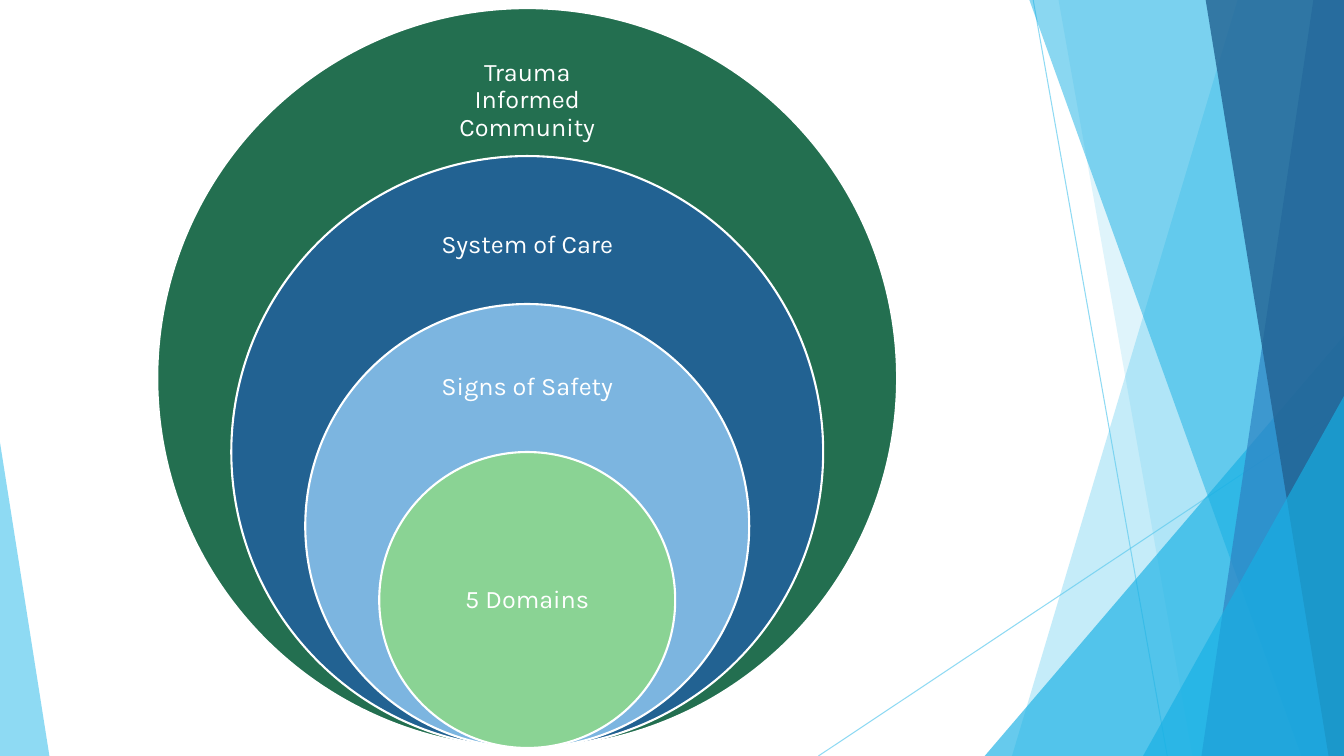
from pptx import Presentation
from pptx.dml.color import RGBColor
from pptx.enum.shapes import MSO_CONNECTOR, MSO_SHAPE
from pptx.enum.text import MSO_ANCHOR, PP_ALIGN
from pptx.oxml.ns import qn
from pptx.util import Pt
from lxml import etree

STRAIGHT = MSO_CONNECTOR.STRAIGHT
TRIANGLE = MSO_SHAPE.ISOSCELES_TRIANGLE
OVAL = MSO_SHAPE.OVAL
MIDDLE = MSO_ANCHOR.MIDDLE
CENTER = PP_ALIGN.CENTER

WHITE = RGBColor(0xFF, 0xFF, 0xFF)
SKY = RGBColor(0x5F, 0xCB, 0xEF)
CYAN = RGBColor(0x17, 0xB0, 0xE4)
BLUE = RGBColor(0x2E, 0x83, 0xC3)
NAVY = RGBColor(0x22, 0x62, 0x92)
FOREST = RGBColor(0x23, 0x6F, 0x50)
LIGHT_BLUE = RGBColor(0x7C, 0xB5, 0xE0)
LIGHT_GREEN = RGBColor(0x8A, 0xD3, 0x94)

WIDTH, HEIGHT = 960, 540
BAND_TOP = -0.6
CENTER_X, CIRCLES_BOTTOM = 376.6, 534.3
OUTER_DIAMETER = 528.5

# Circle colour, label, label top, label width, label height
CIRCLES = [
    (FOREST, "Trauma Informed Community", 32.4, 147.6, 79.2),
    (NAVY, "System of Care", 136.8, 147.6, 76.3),
    (LIGHT_BLUE, "Signs of Safety", 241.2, 147.6, 71.3),
    (LIGHT_GREEN, "5 Domains", 375.8, 149.8, 105.8),
]


def set_opacity(element, percent):
    for color in element.iter(qn("a:srgbClr")):
        etree.SubElement(color, qn("a:alpha"), val=str(percent * 1000))


def fill_facet(facet, color, opacity):
    facet.shadow.inherit = False
    facet.fill.solid()
    facet.fill.fore_color.rgb = color
    facet.line.fill.background()
    set_opacity(facet._element.spPr, opacity)


def add_ray(slide, x1, y1, x2, y2):
    ray = slide.shapes.add_connector(STRAIGHT, Pt(x1), Pt(y1), Pt(x2), Pt(y2))
    ray.line.color.rgb = SKY
    ray.line.width = Pt(0.75)
    properties = ray._element.spPr
    set_opacity(properties, 70)
    etree.SubElement(properties, qn("a:effectLst"))


def add_band(slide, top_x, bottom_x, color, opacity):
    """Band from a slanted left edge to the right edge of the slide."""
    outline = slide.shapes.build_freeform(Pt(top_x), Pt(BAND_TOP))
    outline.add_line_segments([
        (Pt(WIDTH), Pt(BAND_TOP)),
        (Pt(WIDTH), Pt(HEIGHT)),
        (Pt(bottom_x), Pt(HEIGHT)),
    ], close=True)
    fill_facet(outline.convert_to_shape(), color, opacity)


def add_corner(slide, left, right, top, apex, color, opacity):
    """Right triangle standing on the bottom edge of the slide."""
    corner = slide.shapes.add_shape(
        TRIANGLE, Pt(left), Pt(top), Pt(right - left), Pt(HEIGHT - top))
    corner.adjustments[0] = apex
    fill_facet(corner, color, opacity)


def add_circle(slide, diameter, color):
    circle = slide.shapes.add_shape(
        OVAL, Pt(CENTER_X - diameter / 2), Pt(CIRCLES_BOTTOM - diameter),
        Pt(diameter), Pt(diameter))
    circle.shadow.inherit = False
    circle.fill.solid()
    circle.fill.fore_color.rgb = color
    circle.line.color.rgb = WHITE
    circle.line.width = Pt(1.5)


def add_label(slide, text, top, width, height):
    label = slide.shapes.add_textbox(
        Pt(CENTER_X - width / 2), Pt(top), Pt(width), Pt(height))
    frame = label.text_frame
    frame.word_wrap = True
    frame.vertical_anchor = MIDDLE
    frame.margin_left = frame.margin_right = Pt(10)
    frame.margin_top = frame.margin_bottom = Pt(10)
    paragraph = frame.paragraphs[0]
    paragraph.text = text
    paragraph.alignment = CENTER
    paragraph.line_spacing = 0.9
    paragraph.font.name = "Karla"
    paragraph.font.size = Pt(18)
    paragraph.font.color.rgb = WHITE


def add_backdrop(slide):
    add_ray(slide, 738, 0, 833.8, HEIGHT)
    add_ray(slide, WIDTH, 290.2, 584.6, HEIGHT)
    add_band(slide, 884.2, 722.9, SKY, 36)
    add_band(slide, 756, 851.8, SKY, 20)
    add_corner(slide, 703.4, WIDTH, 239.8, 1, CYAN, 66)
    add_band(slide, 735.1, 929.5, CYAN, 50)
    add_band(slide, 938.2, 858.2, BLUE, 70)
    add_band(slide, 861.1, 949, NAVY, 80)
    add_corner(slide, 816.5, WIDTH, 283, 1, CYAN, 66)
    add_corner(slide, 0, 35.3, 316.1, 0, SKY, 70)


def main():
    deck = Presentation()
    deck.slide_width, deck.slide_height = Pt(WIDTH), Pt(HEIGHT)
    slide = deck.slides.add_slide(deck.slide_layouts[6])

    # Faceted backdrop
    add_backdrop(slide)

    # Nested circles, each a fifth of the outer diameter smaller
    for level, (color, text, top, width, height) in enumerate(CIRCLES):
        add_circle(slide, OUTER_DIAMETER * (5 - level) / 5, color)
        add_label(slide, text, top, width, height)

    deck.save("out.pptx")


if __name__ == "__main__":
    main()
